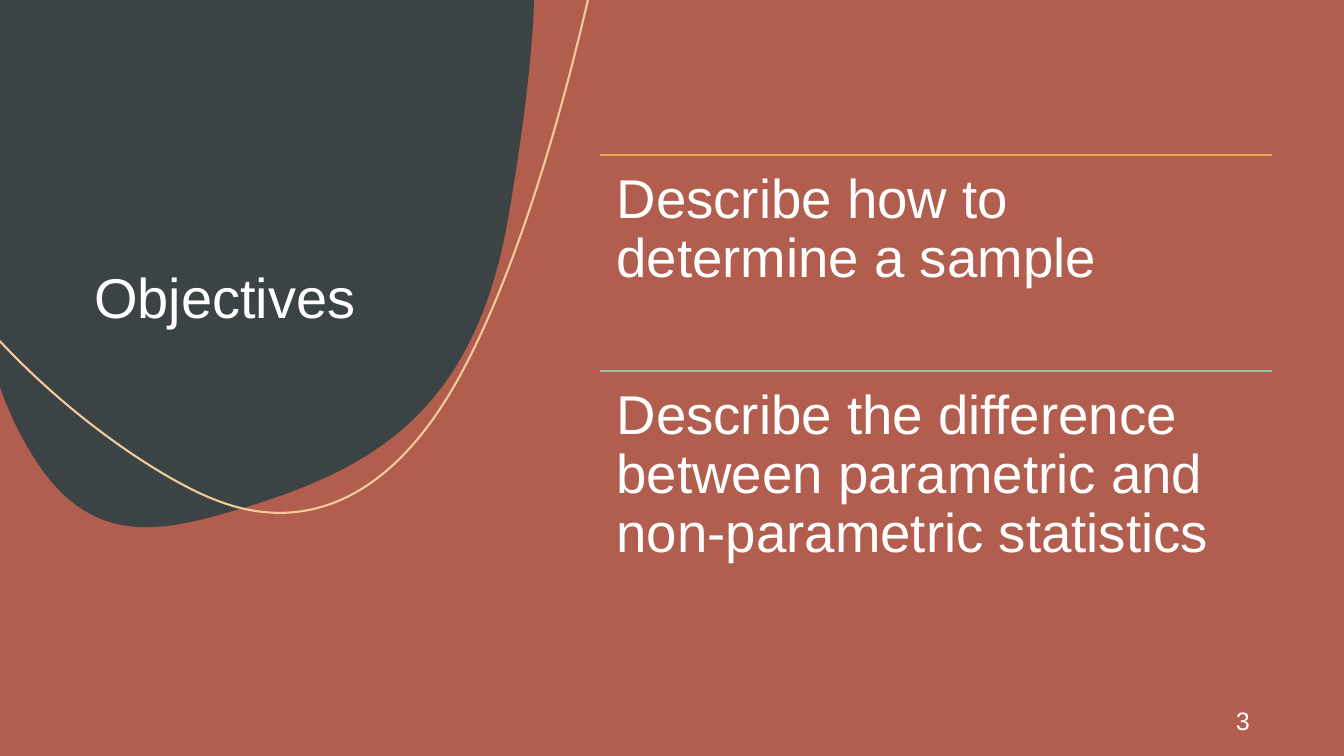
from lxml import etree
from pptx import Presentation
from pptx import util as u
from pptx.dml.color import RGBColor
from pptx.enum import shapes, text
from pptx.oxml.ns import qn

WHITE = "FFFFFF"
BACKDROP = "B15E4E"

# Outlines in cm: a start point, then (x, y) lines or six-number Bezier curves.
BLOB = [(13.46, 0), (13.44, 0.51),
        (13.34, 2.08, 13.11, 3.71, 12.83, 5.36),
        (11.99, 10.44, 9.32, 11.81, 6.2, 12.78),
        (4.09, 13.41, 2.18, 13.94, 0.66, 11.2),
        (0.43, 10.82, 0.25, 10.41, 0.08, 9.98),
        (0, 9.75), (0, 0)]
SWOOSH = [(14.82, 0), (14.81, 0.03),
          (13.89, 3.99, 12.73, 7.44, 11.53, 9.58),
          (9.73, 12.8, 7.47, 13.44, 5.36, 12.57),
          (4.39, 12.19, 2.13, 10.87, 0, 8.6), (0, 8.58)]
OBJECTIVES = [("Describe how to determine a sample", "EBA753"),
              ("Describe the difference between parametric and "
               "non-parametric statistics", "9BBFB0")]


def rgb(value):
    return RGBColor.from_string(value)


def paint(sp, color):
    sp.shadow.inherit = False
    sp.fill.solid()
    sp.fill.fore_color.rgb = rgb(color)
    sp.line.fill.background()


def add_outline(slide, left, top, height, outline, close):
    """Draw an outline whose own coordinates start at its top left corner."""
    ends = [(u.Cm(left + step[-2]), u.Cm(top + step[-1])) for step in outline]
    builder = slide.shapes.build_freeform(*ends[0])
    builder.add_line_segments(ends[1:], close=close)
    sp = builder.convert_to_shape()
    sp.height = u.Cm(height)
    contour = sp._element.find(".//" + qn("a:path"))
    contour.set("h", str(u.Cm(height)))
    for line, step in zip(contour.findall(qn("a:lnTo")), outline[1:]):
        if len(step) == 6:
            curve = etree.Element(qn("a:cubicBezTo"))
            for x, y in zip(step[::2], step[1::2]):
                etree.SubElement(curve, qn("a:pt"),
                                 x=str(u.Cm(x)), y=str(u.Cm(y)))
            contour.replace(line, curve)
    return sp


def add_text(slide, box, words, size, inset=(0.25, 0.13),
             anchor=text.MSO_ANCHOR.TOP, align=text.PP_ALIGN.LEFT, spacing=0.9):
    tf = slide.shapes.add_textbox(*map(u.Cm, box)).text_frame
    tf.word_wrap = True
    tf.vertical_anchor = anchor
    tf.margin_left = tf.margin_right = u.Cm(inset[0])
    tf.margin_top = tf.margin_bottom = u.Cm(inset[1])
    p = tf.paragraphs[0]
    p.text = words
    p.alignment = align
    p.line_spacing = spacing
    p.font.name = "Arial"
    p.font.size = u.Pt(size)
    p.font.color.rgb = rgb(WHITE)


def add_rule(slide, left, top, width, color):
    line = slide.shapes.add_connector(
        shapes.MSO_CONNECTOR.STRAIGHT,
        u.Cm(left), u.Cm(top), u.Cm(left + width), u.Cm(top))
    line.line.color.rgb = rgb(color)
    line.line.width = u.Pt(1)
    etree.SubElement(line._element.spPr, qn("a:effectLst"))


def add_backdrop(prs, slide):
    slide.background.fill.solid()
    slide.background.fill.fore_color.rgb = rgb(BACKDROP)
    sp = slide.shapes.add_shape(shapes.MSO_SHAPE.RECTANGLE, 0, 0,
                                prs.slide_width, prs.slide_height)
    paint(sp, BACKDROP)


def add_title_panel(slide, left, top):
    """Dark blob, the curve that sweeps over it, and the title."""
    paint(add_outline(slide, left, top, 13.28, BLOB, True), "3B4345")
    swoosh = add_outline(slide, left, top, 12.93, SWOOSH, False)
    swoosh.shadow.inherit = False
    swoosh.fill.background()
    swoosh.line.color.rgb = rgb("F1CB9C")
    swoosh.line.width = u.Pt(1.5)
    add_text(slide, (left + 2.12, top + 2.12, 8.46, 6.35), "Objectives", 40,
             anchor=text.MSO_ANCHOR.BOTTOM)


def add_objectives(slide, left, top, width, height):
    row = height / len(OBJECTIVES)
    for i, (words, color) in enumerate(OBJECTIVES):
        y = top + i * row
        add_rule(slide, left, y, width, color)
        add_text(slide, (left, y, width, row), words, 39, inset=(0.42, 0.41))


def add_page_number(slide, box, number):
    add_text(slide, box, str(number), 18, anchor=text.MSO_ANCHOR.MIDDLE,
             align=text.PP_ALIGN.RIGHT, spacing=1.0)


def main():
    prs = Presentation()
    prs.slide_width, prs.slide_height = u.Cm(33.87), u.Cm(19.05)
    slide = prs.slides.add_slide(prs.slide_layouts[6])
    add_backdrop(prs, slide)
    add_title_panel(slide, 0, 0)
    add_objectives(slide, 15.12, 3.91, 16.94, 10.88)
    add_page_number(slide, (27.51, 17.65, 4.24, 1.02), 3)
    prs.save("out.pptx")


if __name__ == "__main__":
    main()
